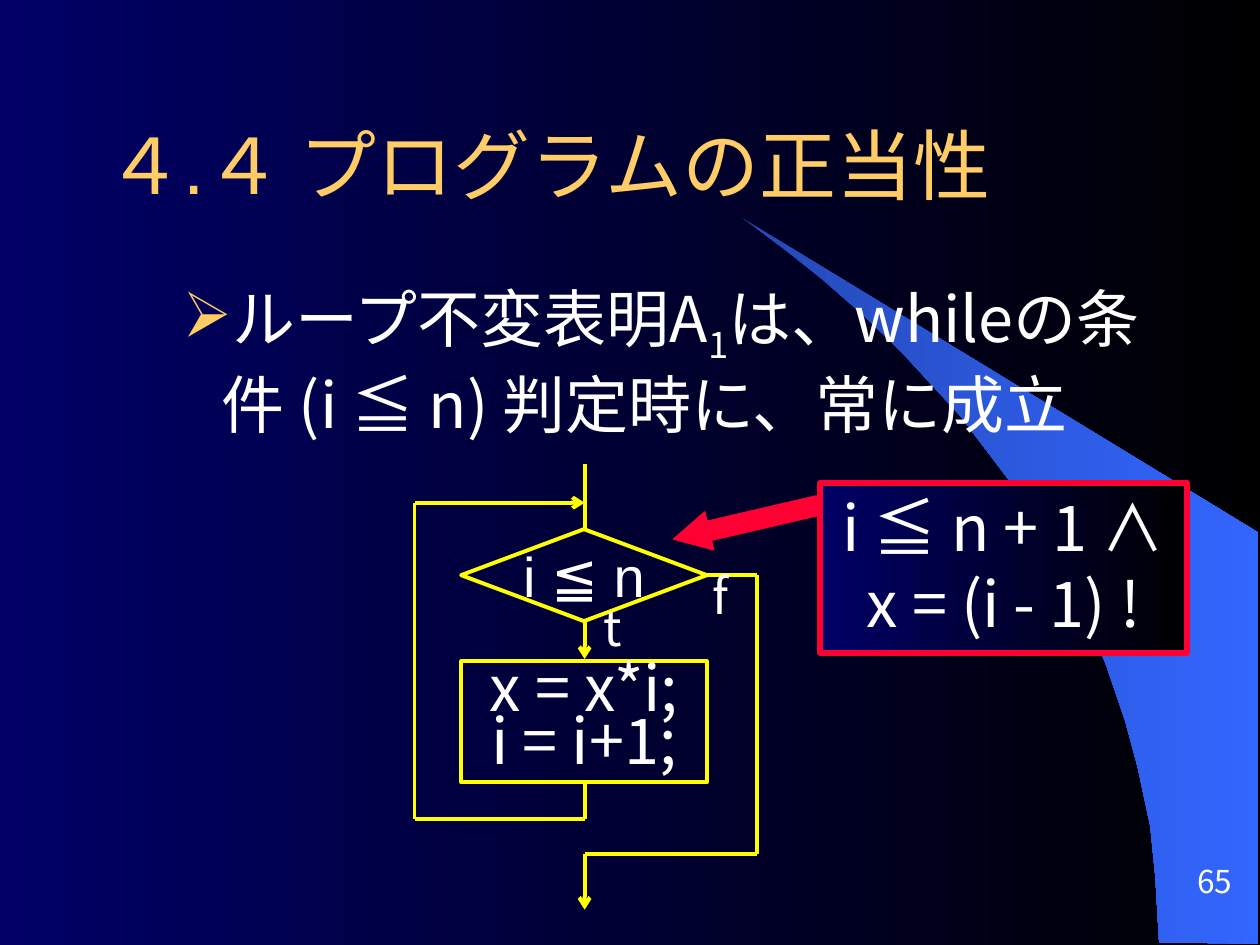
from collections import namedtuple

from pptx import Presentation
from pptx.dml.color import RGBColor
from pptx.enum.shapes import MSO_CONNECTOR as Connector, MSO_SHAPE as Preset
from pptx.enum.text import MSO_ANCHOR as Anchor, PP_ALIGN as Align
from pptx.oxml.ns import qn
from pptx.util import Inches, Pt
from lxml.etree import SubElement

COLORS = {
    "navy": "000066", "black": "000000", "deep_blue": "2449B6", "blue": "3366FF",
    "gold": "FFCC66", "white": "FFFFFF", "red": "FF0033", "yellow": "FFFF00",
}
SANS = "Noto Sans CJK JP"
UNIT = Inches(0.1)
COLUMNS, ROWS = 100, 75
Box = namedtuple("Box", "left top width height")


def color(name):
    """Return the named palette colour."""
    return RGBColor.from_string(COLORS[name])


def grid(*values):
    """Convert grid columns or rows to slide lengths."""
    return [round(value * UNIT) for value in values]


def inside(box, left, top, width, height):
    """Return a box given by its offset within another box."""
    return Box(box.left + left, box.top + top, width, height)


def shade(fill, start, end):
    """Fill with a left-to-right gradient."""
    fill.gradient()
    fill.gradient_angle = 0
    for stop, name in zip(fill.gradient_stops, (start, end)):
        stop.color.rgb = color(name)


def write(shape, *lines, size=36, font=SANS, ink="white", align=Align.LEFT,
          anchor=Anchor.TOP, wrap=True, spacing=None, inset=(1, 0.5)):
    """Write lines, each a string or a list of (text, baseline) runs."""
    frame = shape.text_frame
    frame.word_wrap, frame.vertical_anchor = wrap, anchor
    frame.margin_left = frame.margin_right = grid(inset[0])[0]
    frame.margin_top = frame.margin_bottom = grid(inset[1])[0]
    for index, line in enumerate(lines):
        paragraph = frame.add_paragraph() if index else frame.paragraphs[0]
        paragraph.alignment, paragraph.line_spacing = align, spacing
        for text, baseline in [(line, 0)] if isinstance(line, str) else line:
            run = paragraph.add_run()
            run.text = text
            run.font.size, run.font.name = Pt(size), font
            run.font.color.rgb = color(ink)
            properties = run.font._element
            SubElement(properties, qn("a:ea"), typeface=SANS)
            if baseline:
                properties.set("baseline", str(baseline * 1000))


def add_text(slide, box, *lines, **style):
    """Add a text box."""
    shape = slide.shapes.add_textbox(*grid(*box))
    write(shape, *lines, **style)
    return shape


def add_outline(slide, preset, box, ink, weight):
    """Add an unfilled preset shape with a coloured outline."""
    shape = slide.shapes.add_shape(preset, *grid(*box))
    shape.shadow.inherit = False
    shape.fill.background()
    shape.line.color.rgb, shape.line.width = color(ink), Pt(weight)
    return shape


def add_flow(slide, box, start, end, arrow=False):
    """Draw a flow line between two points of the box."""
    points = [(box.left + x, box.top + y) for x, y in (start, end)]
    connector = slide.shapes.add_connector(
        Connector.STRAIGHT, *grid(*points[0], *points[1]))
    connector.line.color.rgb, connector.line.width = color("yellow"), Pt(2.25)
    if arrow:
        SubElement(connector.line._get_or_add_ln(), qn("a:tailEnd"), type="arrow")
    SubElement(connector._element.spPr, qn("a:effectLst"))


def draw_crescent(slide, box):
    """Draw the blue crescent, its points in hundredths of an inch."""
    curve = [(0, 0), (35, 26), (64, 49), (96, 77), (127, 107), (173, 157),
             (214, 211), (243, 258), (269, 306), (289, 355), (304, 399),
             (314, 436), (324, 483), (328, 523), (331, 575)]
    builder = slide.shapes.build_freeform(410, 576, scale=UNIT / 10)
    builder.add_line_segments([(410, 250), *curve])
    shape = builder.convert_to_shape(*grid(box.left, box.top))
    shape.shadow.inherit = False
    shade(shape.fill, "deep_blue", "blue")
    shape.line.fill.background()


def draw_statement(slide, box):
    """Write the bulleted statement about the loop invariant."""
    shape = add_text(slide, box, [
        ("ループ不変表明A", 0), ("1", -25),
        ("は、whileの条件 (i ≦ n) 判定時に、常に成立", 0)], inset=(2, 0.5))
    properties = shape.text_frame.paragraphs[0]._p.get_or_add_pPr()
    margin, indent = grid(8.1, -3.1)
    properties.set("marL", str(margin))
    properties.set("indent", str(indent))
    bullet_color = SubElement(properties, qn("a:buClr"))
    SubElement(bullet_color, qn("a:srgbClr"), val=COLORS["gold"])
    SubElement(properties, qn("a:buChar"), char="➢")


def draw_invariant(slide, box):
    """Draw the framed invariant and the arrow to the test it belongs to."""
    arrow = add_outline(slide, Preset.LEFT_ARROW, inside(box, -11.8, 1.6, 11.8, 3.1),
                        "red", 0.75)
    arrow.fill.solid()
    arrow.fill.fore_color.rgb = color("red")
    arrow.adjustments[0], arrow.adjustments[1] = 0.5, 0.94
    arrow.rotation = 346.9
    frame = add_outline(slide, Preset.RECTANGLE, box, "red", 3.5)
    shade(frame.fill, "navy", "black")
    write(frame, "i ≦ n + 1 ∧ x = (i - 1) !", align=Align.CENTER)


def draw_loop(slide, box):
    """Draw the flowchart of the while loop."""
    middle, back, leave = box.width / 2 - 0.1, 0.2, box.width - 0.2
    join, test, body, turn, leaving = 3.1, 5.2, 15.7, 28.2, 31
    node_left, node_width, test_height, body_height = 3.9, 19.5, 7.3, 9.6
    test_middle = test + test_height / 2
    centred = dict(align=Align.CENTER, anchor=Anchor.MIDDLE, wrap=False)

    decision = add_outline(slide, Preset.FLOWCHART_DECISION,
                           inside(box, node_left, test, node_width, test_height),
                           "yellow", 2.25)
    write(decision, "i ≦ n", size=32, font="Arial", **centred)
    process = add_outline(slide, Preset.RECTANGLE,
                          inside(box, node_left, body, node_width, body_height),
                          "yellow", 2.25)
    write(process, "x = x*i;", "i = i+1;", spacing=0.7, **centred)

    for start, end, arrow in [
        ((middle, 0), (middle, test), False),
        ((middle, test + test_height), (middle, body - 0.2), True),
        ((middle, body + body_height), (middle, turn), False),
        ((middle, turn), (back, turn), False),
        ((back, turn), (back, join), False),
        ((back, join), (middle, join), True),
        ((node_left + node_width, test_middle), (leave, test_middle), False),
        ((leave, test_middle), (leave, leaving), False),
        ((leave, leaving), (middle, leaving), False),
        ((middle, leaving), (middle, box.height), True),
    ]:
        add_flow(slide, box, start, end, arrow)
    for label, left, top in [("t", 14.2, 10.1), ("f", 22.9, 7.6)]:
        add_text(slide, inside(box, left, top, 3.2, 5.7), label, size=28)


def main():
    """Build the slide and save it."""
    presentation = Presentation()
    presentation.slide_width, presentation.slide_height = grid(COLUMNS, ROWS)
    slide = presentation.slides.add_slide(presentation.slide_layouts[6])
    shade(slide.background.fill, "navy", "black")
    draw_crescent(slide, Box(58.9, 17.3, 41, 57.6))
    add_text(slide, Box(7.5, 6.7, 88.4, 12.5), "４.４ プログラムの正当性",
             size=44, font="Arial", ink="gold", anchor=Anchor.MIDDLE)
    draw_statement(slide, Box(7.5, 21.7, 85, 14.3))
    add_text(slide, Box(88.6, 67.2, 10.2, 4.2), "65", size=18, align=Align.RIGHT,
             anchor=Anchor.BOTTOM, wrap=False, inset=(1, 0))
    draw_invariant(slide, Box(65.1, 38.3, 29.1, 13.5))
    draw_loop(slide, Box(32.7, 36.8, 27.6, 35.4))
    presentation.save("out.pptx")


if __name__ == "__main__":
    main()
